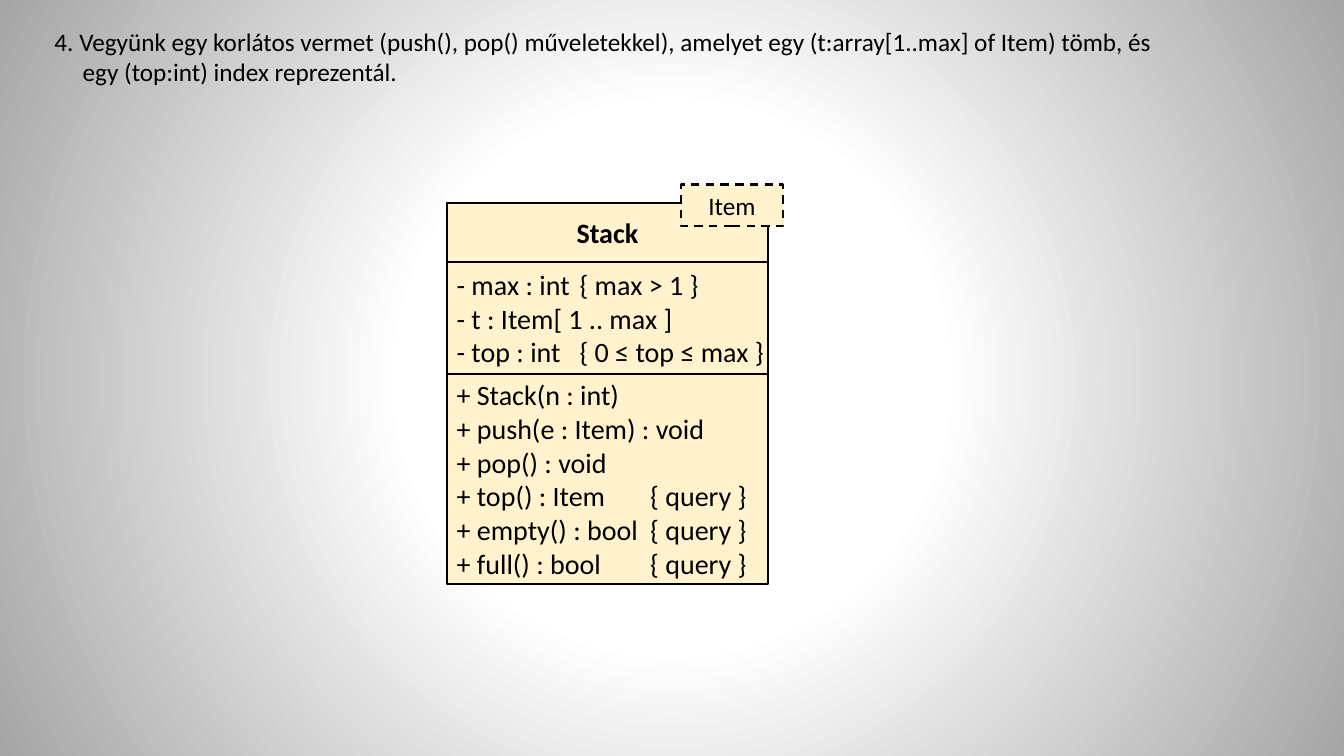
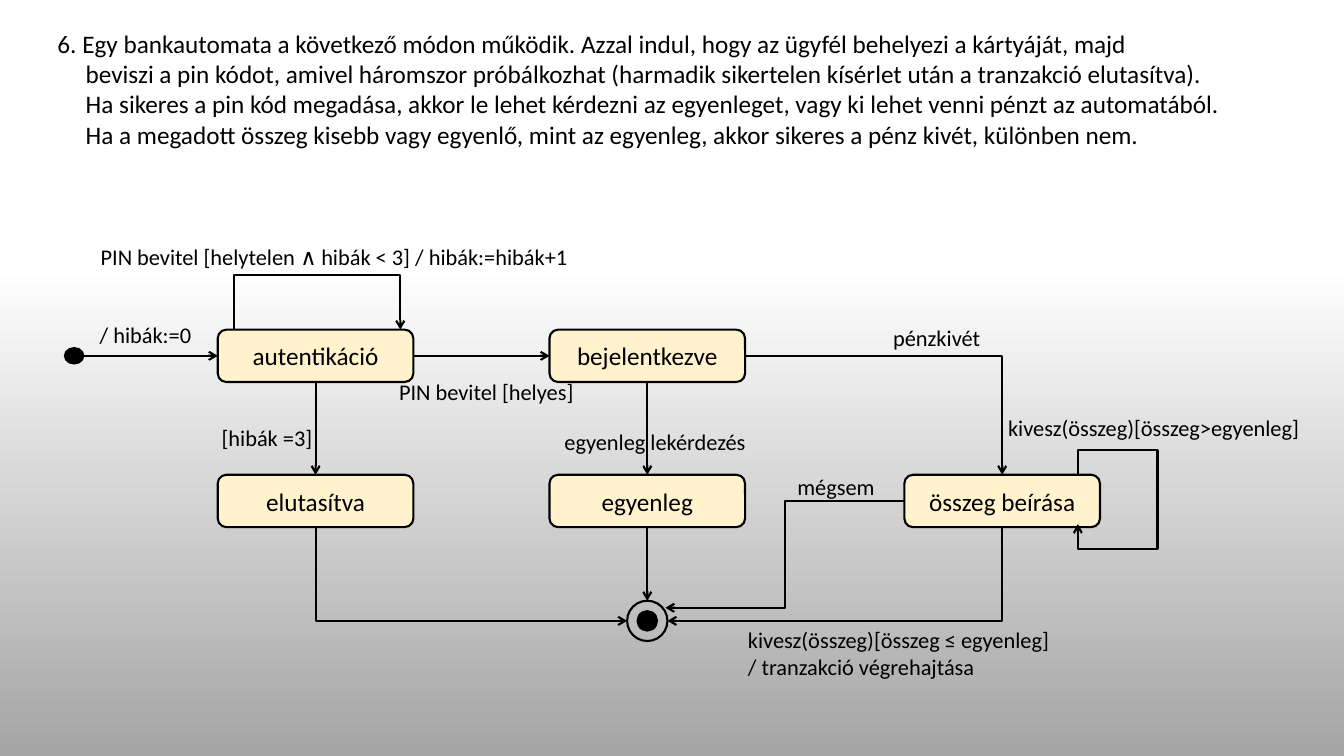
import lxml.etree
import pptx
import pptx.dml.color
import pptx.enum.dml
import pptx.enum.shapes
import pptx.enum.text
import pptx.oxml.ns
import pptx.util

Inches = pptx.util.Inches
Pt = pptx.util.Pt
qn = pptx.oxml.ns.qn
SHAPE = pptx.enum.shapes.MSO_SHAPE
ALIGN = pptx.enum.text.PP_ALIGN
ANCHOR = pptx.enum.text.MSO_ANCHOR

BLACK = pptx.dml.color.RGBColor(0x00, 0x00, 0x00)
WHITE = pptx.dml.color.RGBColor(0xFF, 0xFF, 0xFF)
GREY = pptx.dml.color.RGBColor(0xA5, 0xA5, 0xA5)
CREAM = pptx.dml.color.RGBColor(0xFF, 0xF2, 0xCC)

TOP, LEFT, BOTTOM, RIGHT = 0, 1, 2, 3


def add_xml(parent, tag, **attributes):
    return lxml.etree.SubElement(parent, qn(tag), **attributes)


class Deck:
    """Shared style, and the slide being filled."""

    font = "Calibri"
    line_width = 1.5
    title_size, state_size, label_size, member_size = 18, 18, 16, 20
    hanging = 0.28

    def __init__(self):
        self.prs = pptx.Presentation()
        self.prs.slide_width = Inches(13.33)
        self.prs.slide_height = Inches(7.5)
        self.slide = None

    def new_slide(self, radial=False):
        self.slide = self.prs.slides.add_slide(self.prs.slide_layouts[5])
        self.slide.background.fill.gradient()
        gradient = next(self.slide.element.iter(qn("a:gradFill")))
        for child in list(gradient):
            gradient.remove(child)
        stops = add_xml(gradient, "a:gsLst")
        for percent, color in ((0, WHITE), (35, WHITE), (100, GREY)):
            stop = add_xml(stops, "a:gs", pos=str(percent * 1000))
            add_xml(stop, "a:srgbClr", val=str(color))
        if radial:
            focus = add_xml(gradient, "a:path", path="circle")
            add_xml(focus, "a:fillToRect", l="50000", t="50000", r="50000", b="50000")
        else:
            add_xml(gradient, "a:lin", ang="5400000", scaled="0")

    def add_text(self, paragraph, text, size, bold=False):
        run = paragraph.add_run()
        run.text = text
        run.font.name = self.font
        run.font.size = Pt(size)
        run.font.bold = bold
        run.font.color.rgb = BLACK

    def fill_frame(self, frame, lines, size, align=ALIGN.LEFT, bold=False, tab=None):
        frame.word_wrap = True
        for index, line in enumerate(lines):
            paragraph = frame.add_paragraph() if index else frame.paragraphs[0]
            paragraph.alignment = align
            if tab:
                tabs = add_xml(paragraph._p.get_or_add_pPr(), "a:tabLst")
                add_xml(tabs, "a:tab", pos=str(Inches(tab)), algn="l")
            self.add_text(paragraph, line, size, bold)

    def title(self, x, y, w, h, lines):
        """Numbered exercise text with a hanging indent."""
        title = self.slide.shapes.title
        title.left, title.top, title.width, title.height = map(Inches, (x, y, w, h))
        frame = title.text_frame
        frame.word_wrap = True
        frame.auto_size = pptx.enum.text.MSO_AUTO_SIZE.NONE
        frame.vertical_anchor = ANCHOR.TOP
        paragraph = frame.paragraphs[0]
        paragraph.alignment = ALIGN.LEFT
        properties = paragraph._p.get_or_add_pPr()
        properties.set("marL", str(Inches(self.hanging)))
        properties.set("indent", str(-Inches(self.hanging)))
        for index, line in enumerate(lines):
            if index:
                paragraph.add_line_break()
            self.add_text(paragraph, line, self.title_size)

    def label(self, x, y, w, *lines):
        box = self.slide.shapes.add_textbox(
            Inches(x), Inches(y), Inches(w), Inches(0.1 + 0.27 * len(lines)))
        self.fill_frame(box.text_frame, lines, self.label_size)

    def outline(self, item, width=line_width):
        item.line.color.rgb = BLACK
        item.line.width = Pt(width)

    def shape(self, kind, x, y, w, h, fill=CREAM, width=line_width):
        shape = self.slide.shapes.add_shape(kind, *map(Inches, (x, y, w, h)))
        shape.shadow.inherit = False
        if fill is None:
            shape.fill.background()
        else:
            shape.fill.solid()
            shape.fill.fore_color.rgb = fill
        self.outline(shape, width)
        return shape

    def compartment(self, x, y, w, h, lines, size=member_size, **style):
        """Part of a class box."""
        part = self.shape(SHAPE.RECTANGLE, x, y, w, h)
        frame = part.text_frame
        frame.margin_top = frame.margin_bottom = 0
        if style.get("align") != ALIGN.CENTER:
            frame.margin_right = 0
        frame.vertical_anchor = ANCHOR.MIDDLE
        self.fill_frame(frame, lines, size, **style)
        return part

    def state(self, x, y, name):
        state = self.shape(SHAPE.ROUNDED_RECTANGLE, x, y, 1.94, 0.52)
        state.text_frame.vertical_anchor = ANCHOR.MIDDLE
        self.fill_frame(state.text_frame, [name], self.state_size, ALIGN.CENTER)
        return state

    def arrowhead(self, item):
        self.outline(item)
        add_xml(item.line._get_or_add_ln(), "a:tailEnd", type="arrow")

    def arrow(self, target, target_side, source=None, source_side=None, start=(0, 0)):
        """Straight transition from a state, or from a point, to a target."""
        x, y = map(Inches, start)
        arrow = self.slide.shapes.add_connector(
            pptx.enum.shapes.MSO_CONNECTOR.STRAIGHT, x, y, x, y)
        if source is not None:
            arrow.begin_connect(source, source_side)
        arrow.end_connect(target, target_side)
        self.arrowhead(arrow)
        add_xml(arrow._element.spPr, "a:effectLst")

    def bent_arrow(self, *points):
        """Transition with right-angled corners."""
        (x, y), *corners = [tuple(map(Inches, point)) for point in points]
        builder = self.slide.shapes.build_freeform(x, y)
        builder.add_line_segments(corners, close=False)
        route = builder.convert_to_shape()
        route.shadow.inherit = False
        route.fill.background()
        self.arrowhead(route)


def stack_slide(deck):
    deck.new_slide(radial=True)
    deck.title(0.44, 0.21, 11.6, 1.01, [
        "4. Vegyünk egy korlátos vermet (push(), pop() műveletekkel), "
        "amelyet egy (t:array[1..max] of Item) tömb, és",
        "egy (top:int) index reprezentál."])

    # Class box: name, attributes, methods
    x, w = 4.43, 3.19
    deck.compartment(x, 2.01, w, 0.59, ["Stack"], align=ALIGN.CENTER, bold=True)
    deck.compartment(x, 2.6, w, 1.11, [
        "- max : int\t{ max > 1 }",
        "- t : Item[ 1 .. max ]",
        "- top : int\t{ 0 ≤ top ≤ max }"], tab=1.22)
    deck.compartment(x, 3.71, w, 2.08, [
        "+ Stack(n : int)",
        "+ push(e : Item) : void",
        "+ pop() : void",
        "+ top() : Item\t{ query }",
        "+ empty() : bool\t{ query }",
        "+ full() : bool\t{ query }"], tab=1.92)

    # Template parameter
    parameter = deck.compartment(6.75, 1.83, 1.02, 0.41, ["Item"], size=18,
                                 align=ALIGN.CENTER)
    parameter.line.dash_style = pptx.enum.dml.MSO_LINE.DASH


def cash_machine_slide(deck):
    deck.new_slide()
    deck.title(0.47, 0.23, 12.4, 1.31, [
        "6. Egy bankautomata a következő módon működik. Azzal indul, "
        "hogy az ügyfél behelyezi a kártyáját, majd",
        "beviszi a pin kódot, amivel háromszor próbálkozhat "
        "(harmadik sikertelen kísérlet után a tranzakció elutasítva).",
        "Ha sikeres a pin kód megadása, akkor le lehet kérdezni az egyenleget, "
        "vagy ki lehet venni pénzt az automatából.",
        "Ha a megadott összeg kisebb vagy egyenlő, mint az egyenleg, "
        "akkor sikeres a pénz kivét, különben nem."])

    # States on three columns and two rows
    columns, (upper, lower) = (2.16, 5.45, 8.97), (3.27, 4.71)
    login_x, session_x, amount_x = (column + 0.97 for column in columns)
    upper_y, lower_y, lower_edge = upper + 0.26, lower + 0.26, lower + 0.52
    authentication = deck.state(columns[0], upper, "autentikáció")
    logged_in = deck.state(columns[1], upper, "bejelentkezve")
    rejected = deck.state(columns[0], lower, "elutasítva")
    balance = deck.state(columns[1], lower, "egyenleg")
    deck.state(columns[2], lower, "összeg beírása")

    # Start and final nodes
    final_y = 6.16
    deck.shape(SHAPE.OVAL, 0.64, 3.45, 0.19, 0.16, BLACK, 1)
    final = deck.shape(SHAPE.OVAL, session_x - 0.2, final_y - 0.2, 0.4, 0.4, None)
    deck.shape(SHAPE.OVAL, session_x - 0.1, final_y - 0.1, 0.2, 0.2, BLACK, 1)

    # Straight transitions
    deck.arrow(authentication, LEFT, start=(0.83, upper_y))
    deck.arrow(logged_in, LEFT, authentication, RIGHT)
    deck.arrow(rejected, TOP, authentication, BOTTOM)
    deck.arrow(balance, TOP, logged_in, BOTTOM)
    deck.arrow(final, TOP, balance, BOTTOM)

    # Bent transitions and loops
    deck.bent_arrow((2.32, upper), (2.32, 2.73), (3.97, 2.73), (3.97, upper))
    deck.bent_arrow((7.39, upper_y), (amount_x, upper_y), (amount_x, lower))
    deck.bent_arrow((10.69, lower), (10.69, 4.46), (11.48, 4.46),
                    (11.48, 5.45), (10.69, 5.45), (10.69, 5.2))
    deck.bent_arrow((login_x, lower_edge), (login_x, final_y), (6.22, final_y))
    deck.bent_arrow((amount_x, lower_edge), (amount_x, final_y), (6.62, final_y))
    deck.bent_arrow((columns[2], lower_y), (7.79, lower_y), (7.79, 6.03), (6.6, 6.03))

    # Transition labels
    deck.label(0.9, 2.36, 5.2, "PIN bevitel [helytelen ∧ hibák < 3] / hibák:=hibák+1")
    deck.label(0.89, 3.14, 1.3, "/ hibák:=0")
    deck.label(3.86, 3.7, 2.2, "PIN bevitel [helyes]")
    deck.label(2.1, 4.16, 1.3, "[hibák =3]")
    deck.label(5.5, 4.2, 2.2, "egyenleg lekérdezés")
    deck.label(8.76, 3.17, 1.3, "pénzkivét")
    deck.label(9.9, 4.06, 3.4, "kivesz(összeg)[összeg>egyenleg]")
    deck.label(7.81, 4.64, 1.15, "mégsem")
    deck.label(7.32, 6.16, 3.5, "kivesz(összeg)[összeg ≤ egyenleg]",
               "/ tranzakció végrehajtása")


def main():
    deck = Deck()
    stack_slide(deck)
    cash_machine_slide(deck)
    deck.prs.save("out.pptx")


if __name__ == "__main__":
    main()
